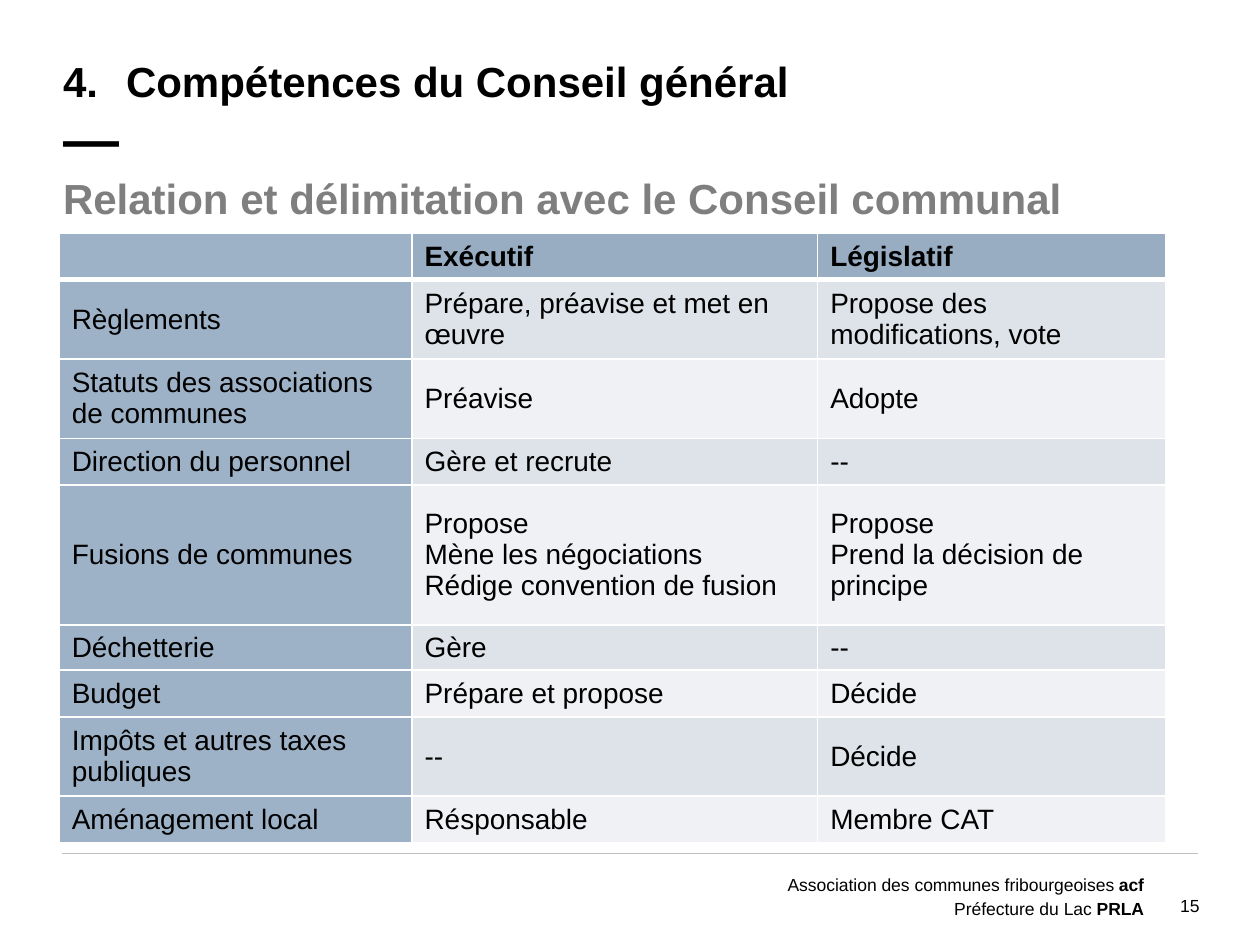
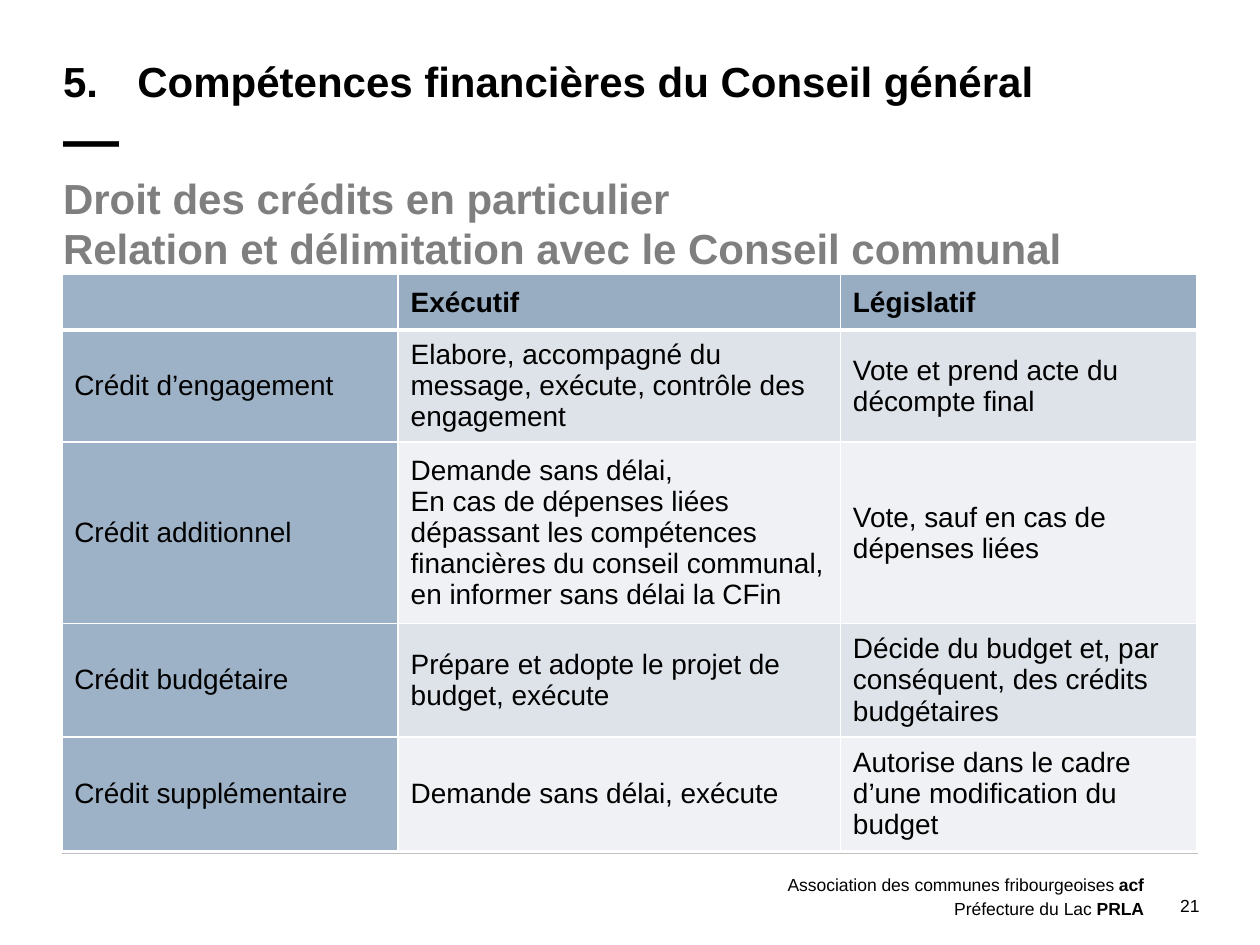
from dataclasses import dataclass

from lxml import etree
from pptx import Presentation
from pptx.dml.color import RGBColor
from pptx.enum import shapes, text
from pptx.oxml import ns
from pptx.util import Inches, Pt


@dataclass(frozen=True)
class Theme:
    font: str = "Arial"
    ink: str = "000000"
    subtitle: str = "7F7F7F"
    rule: str = "C0C0C0"
    border: str = "FFFFFF"
    label: str = "9EB2C7"
    header: str = "98ADC2"
    bands: tuple = ("DDE3E9", "EFF1F4")
    heading_size: int = 24
    dash_size: int = 32
    table_size: int = 16
    footer_size: int = 10


THEME = Theme()
TITLE_ONLY = 5


def set_all(target, values):
    for name, value in values.items():
        setattr(target, name, value)


def style_run(run, size, color=THEME.ink, bold=False):
    set_all(run.font, {"name": THEME.font, "size": Pt(size), "bold": bold})
    run.font.color.rgb = RGBColor.from_string(color)


def add_run(paragraph, content, size, color=THEME.ink, bold=False):
    run = paragraph.add_run()
    run.text = content
    style_run(run, size, color, bold)


def format_frame(frame):
    set_all(frame, {
        "margin_left": 0, "margin_right": 0, "margin_top": 0, "margin_bottom": 0,
        "word_wrap": True, "vertical_anchor": text.MSO_ANCHOR.TOP,
        "auto_size": text.MSO_AUTO_SIZE.SHAPE_TO_FIT_TEXT,
    })


def add_text_box(slide, left, top, width, height):
    box = slide.shapes.add_textbox(Inches(left), Inches(top), Inches(width), Inches(height))
    format_frame(box.text_frame)
    return box.text_frame


def add_tab_stop(paragraph, position):
    properties = paragraph._p.get_or_add_pPr()
    tab_list = etree.SubElement(properties, ns.qn("a:tabLst"))
    etree.SubElement(tab_list, ns.qn("a:tab"), pos=str(Inches(position)), algn="l")


def add_title(slide, number, title, tab):
    shape = slide.shapes.title
    set_all(shape, {"left": Inches(0.5), "top": Inches(0.33),
                    "width": Inches(9.01), "height": Inches(1.04)})
    format_frame(shape.text_frame)
    paragraph = shape.text_frame.paragraphs[0]
    set_all(paragraph, {"alignment": text.PP_ALIGN.LEFT, "line_spacing": Pt(37)})
    add_tab_stop(paragraph, tab)
    add_run(paragraph, f"{number}.\t{title}", THEME.heading_size, bold=True)
    paragraph.add_line_break()
    add_run(paragraph, "—", THEME.dash_size, bold=True)


def add_subtitle(slide, lines):
    frame = add_text_box(slide, 0.5, 1.37, 9.01, 0.4 * len(lines))
    paragraph = frame.paragraphs[0]
    paragraph.text = "\v".join(lines)
    set_all(paragraph, {"line_spacing": Pt(28.8), "space_after": Pt(6)})
    for run in paragraph.runs:
        style_run(run, THEME.heading_size, THEME.subtitle, True)


def add_footer(slide, page):
    rule = slide.shapes.add_connector(
        shapes.MSO_CONNECTOR.STRAIGHT, Inches(0.49), Inches(6.77), Inches(9.51), Inches(6.77))
    rule.line.color.rgb = RGBColor.from_string(THEME.rule)
    rule.line.width = Pt(0.25)
    etree.SubElement(rule._element.spPr, ns.qn("a:effectLst"))

    frame = add_text_box(slide, 6.18, 6.92, 2.9, 0.35)
    organisations = (("Association des communes fribourgeoises ", "acf"),
                     ("Préfecture du Lac ", "PRLA"))
    for index, (name, initials) in enumerate(organisations):
        paragraph = frame.add_paragraph() if index else frame.paragraphs[0]
        set_all(paragraph, {"alignment": text.PP_ALIGN.RIGHT, "line_spacing": Pt(13.4)})
        add_run(paragraph, name, THEME.footer_size)
        add_run(paragraph, initials, THEME.footer_size, bold=True)

    paragraph = add_text_box(slide, 9.08, 7.1, 0.44, 0.17).paragraphs[0]
    paragraph.alignment = text.PP_ALIGN.RIGHT
    add_run(paragraph, str(page), THEME.footer_size)


def add_borders(cell, is_header, below_header):
    properties = cell._tc.get_or_add_tcPr()
    widths = {"lnL": 1, "lnR": 1, "lnT": 3 if below_header else 1, "lnB": 3 if is_header else 1}
    for index, (side, width) in enumerate(widths.items()):
        line = etree.Element(ns.qn(f"a:{side}"), w=str(Pt(width)))
        fill = etree.SubElement(line, ns.qn("a:solidFill"))
        etree.SubElement(fill, ns.qn("a:srgbClr"), val=THEME.border)
        properties.insert(index, line)


def cell_color(row, column):
    if column == 0:
        return THEME.label
    return THEME.bands[(row - 1) % 2] if row else THEME.header


def fill_cell(cell, content, row, column):
    set_all(cell, {"vertical_anchor": text.MSO_ANCHOR.MIDDLE,
                   "margin_top": Inches(0.02), "margin_bottom": Inches(0.02)})
    cell.fill.solid()
    cell.fill.fore_color.rgb = RGBColor.from_string(cell_color(row, column))
    add_borders(cell, row == 0, row == 1)
    cell.text = content
    for paragraph in cell.text_frame.paragraphs:
        for run in paragraph.runs:
            style_run(run, THEME.table_size, bold=row == 0)


def add_comparison(slide, left, top, widths, heights, rows):
    rows = [("", "Exécutif", "Législatif"), *rows]
    table = slide.shapes.add_table(
        len(rows), len(widths), Inches(left), Inches(top),
        Inches(sum(widths)), Inches(sum(heights))).table
    for column, width in zip(table.columns, widths):
        column.width = Inches(width)
    for row, height in zip(table.rows, heights):
        row.height = Inches(height)
    for row_index, contents in enumerate(rows):
        for column_index, content in enumerate(contents):
            fill_cell(table.cell(row_index, column_index), content, row_index, column_index)


SLIDES = (
    {
        "page": 15,
        "title": (4, "Compétences du Conseil général", 0.5),
        "subtitle": ("Relation et délimitation avec le Conseil communal",),
        "table": {
            "left": 0.47, "top": 1.85, "widths": (2.8, 3.22, 2.76),
            "heights": (0.37, 0.63, 0.63, 0.37, 1.11, 0.36, 0.37, 0.63, 0.37),
            "rows": (
                ("Règlements", "Prépare, préavise et met en œuvre",
                 "Propose des modifications, vote"),
                ("Statuts des associations de communes", "Préavise", "Adopte"),
                ("Direction du personnel", "Gère et recrute", "--"),
                ("Fusions de communes",
                 "Propose\nMène les négociations\nRédige convention de fusion",
                 "Propose\nPrend la décision de principe"),
                ("Déchetterie", "Gère", "--"),
                ("Budget", "Prépare et propose", "Décide"),
                ("Impôts et autres taxes publiques", "--", "Décide"),
                ("Aménagement local", "Résponsable", "Membre CAT"),
            ),
        },
    },
    {
        "page": 21,
        "title": (5, "Compétences financières du Conseil général", 0.59),
        "subtitle": ("Droit des crédits en particulier",
                     "Relation et délimitation avec le Conseil communal"),
        "table": {
            "left": 0.49, "top": 2.18, "widths": (2.67, 3.51, 2.83),
            "heights": (0.44, 0.89, 1.44, 0.9, 0.9),
            "rows": (
                ("Crédit d’engagement",
                 "Elabore, accompagné du message, exécute, contrôle des engagement",
                 "Vote et prend acte du décompte final"),
                ("Crédit additionnel",
                 "Demande sans délai,\nEn cas de dépenses liées dépassant les compétences "
                 "financières du conseil communal, en informer sans délai la CFin",
                 "Vote, sauf en cas de dépenses liées"),
                ("Crédit budgétaire", "Prépare et adopte le projet de budget, exécute",
                 "Décide du budget et, par conséquent, des crédits budgétaires"),
                ("Crédit supplémentaire", "Demande sans délai, exécute",
                 "Autorise dans le cadre d’une modification du budget"),
            ),
        },
    },
)


def main():
    presentation = Presentation()
    set_all(presentation, {"slide_width": Inches(10), "slide_height": Inches(7.5)})
    for content in SLIDES:
        slide = presentation.slides.add_slide(presentation.slide_layouts[TITLE_ONLY])
        add_footer(slide, content["page"])
        add_title(slide, *content["title"])
        add_subtitle(slide, content["subtitle"])
        add_comparison(slide, **content["table"])
    presentation.save("out.pptx")


if __name__ == "__main__":
    main()
